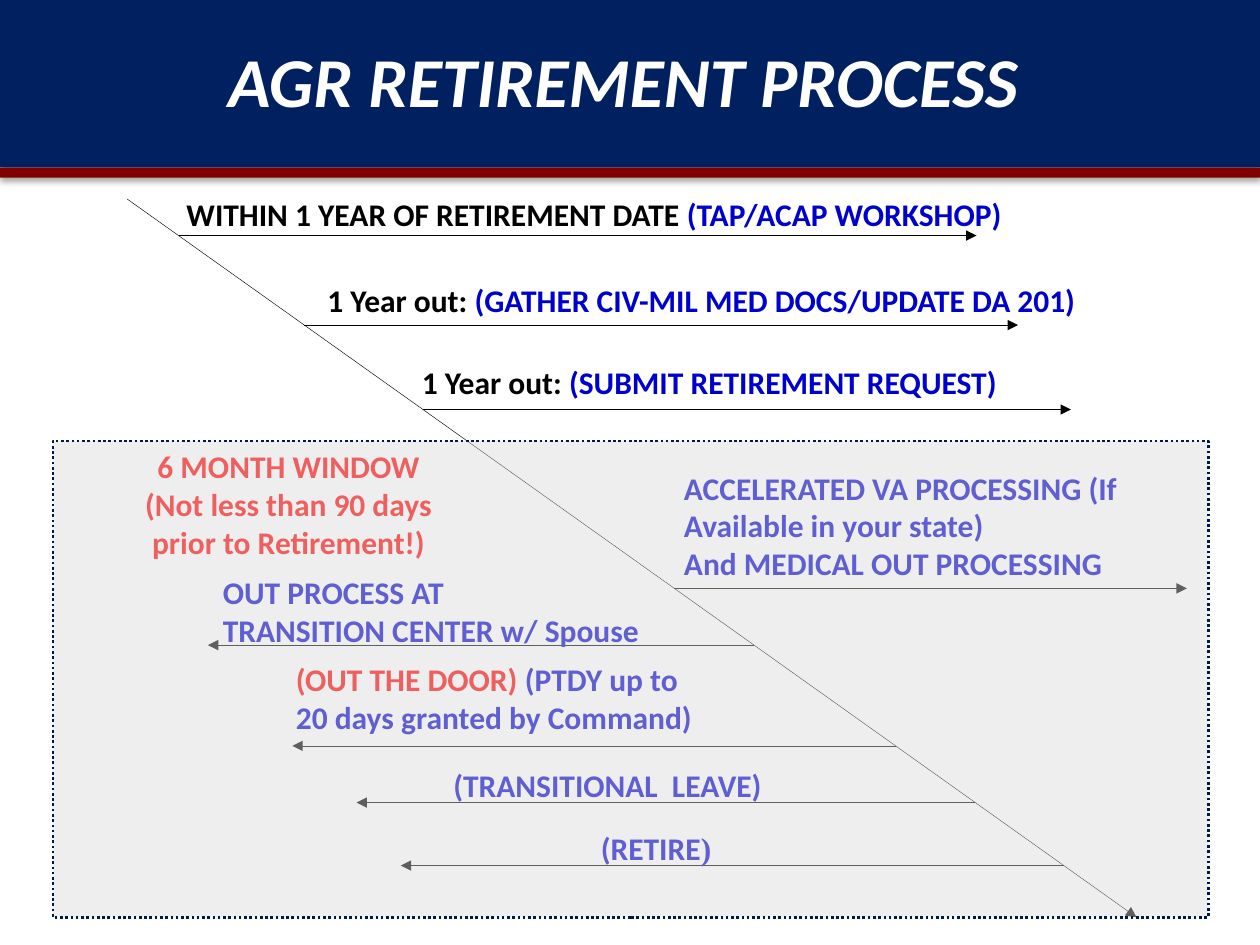
from lxml import etree
from pptx import Presentation
from pptx.dml.color import RGBColor
from pptx.enum.dml import MSO_LINE
from pptx.enum.shapes import MSO_CONNECTOR, MSO_SHAPE
from pptx.enum.text import MSO_ANCHOR, MSO_AUTO_SIZE, PP_ALIGN
from pptx.oxml.ns import qn
from pptx.util import Inches, Pt

RECT = MSO_SHAPE.RECTANGLE
LINE = MSO_CONNECTOR.STRAIGHT
DOTS = MSO_LINE.ROUND_DOT
TOP = MSO_ANCHOR.TOP
FIXED = MSO_AUTO_SIZE.NONE
LEFT, MID = PP_ALIGN.LEFT, PP_ALIGN.CENTER

COLORS = {
    "navy": "002060", "maroon": "800000", "white": "FFFFFF",
    "black": "000000", "blue": "0000CC", "red": "FF0000",
    "gray": "D9D9D9", "edge": "001847",
}
FONT = "Calibri"

# The time line runs diagonally down the slide
START, END = (1.01, 1.58), (9.02, 7.28)

# Height of each step line and where its arrow points
STEPS = [(1.87, 7.75), (2.58, 8.08), (3.25, 8.5), (4.67, 9.42),
         (5.12, 1.65), (5.92, 2.32), (6.37, 2.83), (6.87, 3.18)]

# Box, alignment, then paragraphs of (text, colour[, font]) runs
LABELS = [
    ((1.18, 1.5, 7.07, 0.4), MID,
     [[("WITHIN 1 YEAR OF RETIREMENT DATE ", "black"),
       ("(TAP/ACAP WORKSHOP)", "blue")]]),
    ((2.5, 2.18, 7.25, 0.4), LEFT,
     [[("1 Year out: ", "black"),
       ("(GATHER CIV-MIL MED DOCS/UPDATE DA 201)", "blue")]]),
    ((3.25, 2.83, 5.67, 0.4), LEFT,
     [[("1 Year out: ", "black"), ("(SUBMIT RETIREMENT REQUEST)", "blue")]]),
    ((1, 3.5, 2.58, 1), MID,
     [[("6 MONTH WINDOW", "red")],
      [("(Not less than 90 days prior to Retirement!)", "red")]]),
    ((5.33, 3.67, 4.25, 1), LEFT,
     [[("ACCELERATED VA PROCESSING (If Available in your state)", "blue")],
      [("And MEDICAL OUT PROCESSING", "blue")]]),
    ((1.67, 4.5, 5.14, 0.71), LEFT,
     [[("OUT PROCESS AT", "blue")],
      [("TRANSITION CENTER w/ Spouse", "blue")]]),
    ((2.25, 5.19, 4.17, 0.81), LEFT,
     [[("(OUT THE DOOR) ", "red"), ("(PTDY up to", "blue")],
      [("20 days granted by Command)", "blue")]]),
    ((3.5, 6.03, 4, 0.4), LEFT, [[("(TRANSITIONAL  LEAVE)", "blue")]]),
    ((4.67, 6.53, 1.43, 0.4), LEFT,
     [[("(RETIRE", "blue"), (")", "blue", "Times New Roman")]]),
]


def color(name):
    return RGBColor.from_string(COLORS[name])


def add_run(para, text, tint, face=FONT, size=18):
    run = para.add_run()
    run.text = text
    font = run.font
    font.name, font.size, font.bold = face, Pt(size), True
    font.color.rgb = color(tint)
    return run


def add_rect(slide, box, fill):
    shape = slide.shapes.add_shape(RECT, *map(Inches, box))
    shape.shadow.inherit = False
    shape.fill.solid()
    shape.fill.fore_color.rgb = color(fill)
    shape.line.fill.background()
    return shape


def add_band(slide, top, height, fill):
    band = add_rect(slide, (0, top, 10, height), fill)
    # Soft shadow below the band
    glow = band._element.spPr.find(qn("a:effectLst"))
    shade = etree.SubElement(glow, qn("a:outerShdw"), blurRad=str(Pt(3)),
                             dist=str(Pt(2)), dir="5400000", rotWithShape="0")
    tint = etree.SubElement(shade, qn("a:srgbClr"), val=COLORS["black"])
    etree.SubElement(tint, qn("a:alpha"), val="35000")


def add_title(slide, text):
    title = slide.shapes.title
    title.left, title.top = Inches(1.71), Inches(0.25)
    title.width, title.height = Inches(7.31), Inches(0.77)
    frame = title.text_frame
    frame.auto_size, frame.vertical_anchor = FIXED, TOP
    para = frame.paragraphs[0]
    para.alignment = LEFT
    add_run(para, text, "white", size=40).font.italic = True
    # Bring the title in front of the bands
    slide.shapes._spTree.append(title._element)


def add_arrow(slide, start, end):
    arrow = slide.shapes.add_connector(LINE, *map(Inches, start + end))
    arrow.line.color.rgb = color("black")
    arrow.line.width = Pt(0.25)
    etree.SubElement(arrow.line._get_or_add_ln(), qn("a:tailEnd"),
                     type="triangle")
    etree.SubElement(arrow._element.spPr, qn("a:effectLst"))


def add_label(slide, box, align, paras):
    frame = slide.shapes.add_textbox(*map(Inches, box)).text_frame
    frame.word_wrap = True
    for i, runs in enumerate(paras):
        para = frame.add_paragraph() if i else frame.paragraphs[0]
        para.alignment = align
        for run in runs:
            add_run(para, *run)


def add_window(slide):
    pane = add_rect(slide, (0.42, 3.5, 9.17, 3.78), "gray")
    tint = pane._element.spPr.find(qn("a:solidFill"))[0]
    etree.SubElement(tint, qn("a:alpha"), val="44000")
    pane.line.color.rgb = color("edge")
    pane.line.width = Pt(1.5)
    pane.line.dash_style = DOTS


def main():
    deck = Presentation()
    deck.slide_width, deck.slide_height = Inches(10), Inches(7.5)
    slide = deck.slides.add_slide(deck.slide_layouts[5])

    # Header
    add_band(slide, 0, 1.33, "navy")
    add_band(slide, 1.33, 0.08, "maroon")
    add_title(slide, "AGR RETIREMENT PROCESS")

    # Time line, with each step starting on it
    add_arrow(slide, START, END)
    slope = (END[0] - START[0]) / (END[1] - START[1])
    for y, tip in STEPS:
        add_arrow(slide, (START[0] + (y - START[1]) * slope, y), (tip, y))

    for label in LABELS:
        add_label(slide, *label)

    # Veil over the last six months
    add_window(slide)
    deck.save("out.pptx")


if __name__ == "__main__":
    main()
